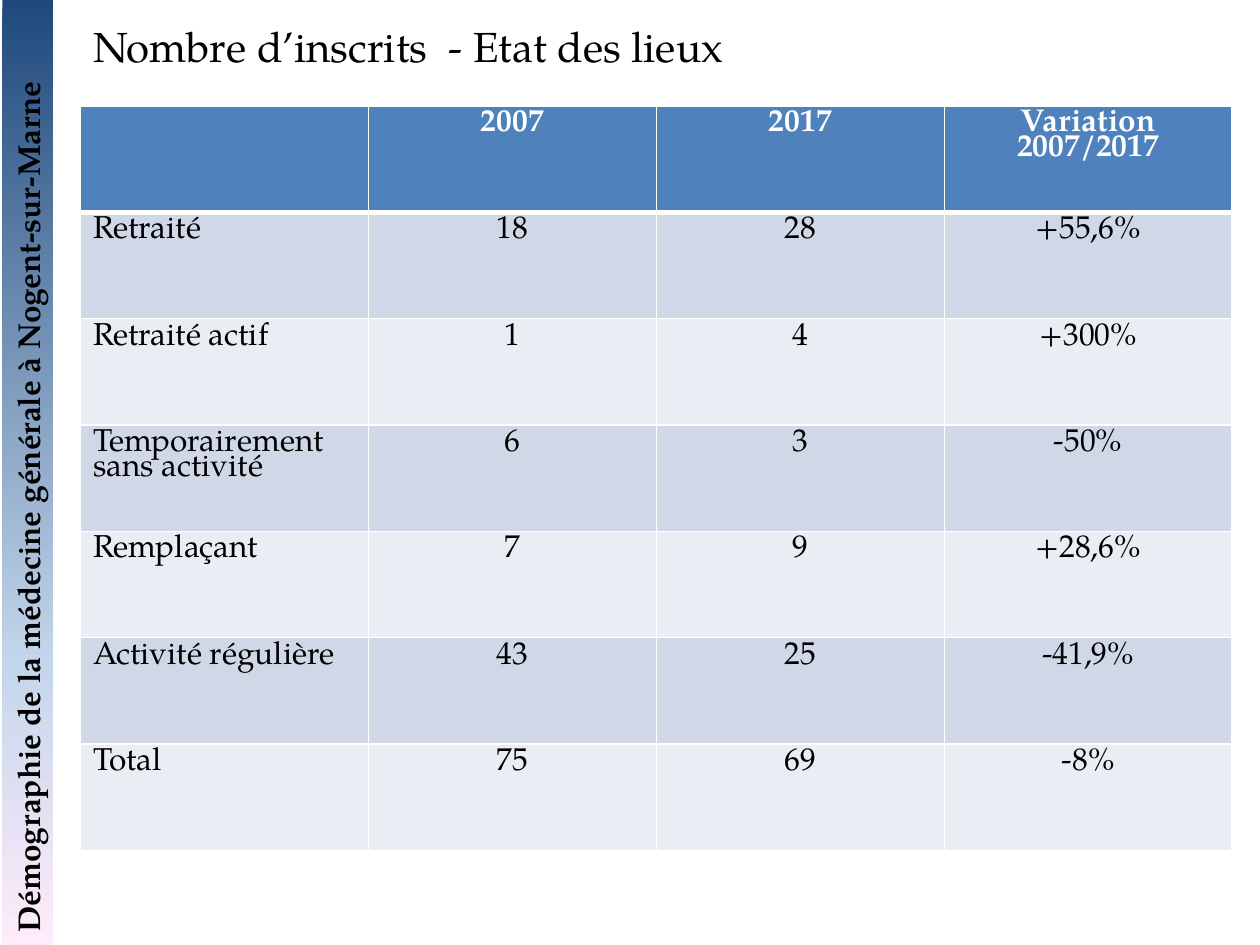
from dataclasses import dataclass

import lxml.etree
import pptx
import pptx.dml.color
import pptx.enum.shapes
import pptx.enum.text
import pptx.oxml
import pptx.oxml.ns
import pptx.util

Inches = pptx.util.Inches
Align = pptx.enum.text.PP_ALIGN


@dataclass(frozen=True)
class Theme:
    font: str = "TeX Gyre Pagella"
    title_size: int = 24
    body_size: int = 18
    text: str = "000000"
    white: str = "FFFFFF"
    header: str = "4F81BD"
    bands: tuple = ("D0D8E8", "E9EDF4")
    banner: tuple = ((0, "1F497D"), (70, "C4D6EB"), (100, "FFEBFA"))
    thin_border: int = 1
    thick_border: int = 3


def rgb(color):
    return pptx.dml.color.RGBColor.from_string(color)


def write(frame, text, *, font, size, color, bold=False, align=Align.LEFT, spacing=None):
    paragraph = frame.paragraphs[0]
    paragraph.alignment = align
    paragraph.line_spacing = spacing
    run = paragraph.add_run()
    run.text = text
    run.font.name = font
    run.font.size = pptx.util.Pt(size)
    run.font.bold = bold
    run.font.color.rgb = rgb(color)


class SlideBuilder:
    def __init__(self, slide, theme):
        self.slide = slide
        self.theme = theme

    def banner(self, text, left, top, width, height):
        """Rotated side bar whose gradient runs down the slide."""
        shape = self.slide.shapes.add_shape(
            pptx.enum.shapes.MSO_SHAPE.RECTANGLE,
            Inches(left), Inches(top), Inches(width), Inches(height))
        shape.rotation = 270
        shape.shadow.inherit = False
        shape.line.fill.background()
        stops = "".join(
            f'<a:gs pos="{position * 1000}"><a:srgbClr val="{color}"/></a:gs>'
            for position, color in self.theme.banner)
        gradient = pptx.oxml.parse_xml(
            f'<a:gradFill {pptx.oxml.ns.nsdecls("a")} rotWithShape="0">'
            f'<a:gsLst>{stops}</a:gsLst><a:lin ang="5400000" scaled="0"/></a:gradFill>')
        geometry = shape.element.spPr.find(pptx.oxml.ns.qn("a:prstGeom"))
        geometry.addnext(gradient)
        frame = shape.text_frame
        frame.word_wrap = True
        frame.vertical_anchor = pptx.enum.text.MSO_ANCHOR.TOP
        frame.auto_size = pptx.enum.text.MSO_AUTO_SIZE.SHAPE_TO_FIT_TEXT
        write(frame, text, font=self.theme.font, size=self.theme.body_size,
              color=self.theme.text, bold=True)

    def title(self, text, left, top, width, height):
        shape = self.slide.shapes.add_textbox(
            Inches(left), Inches(top), Inches(width), Inches(height))
        frame = shape.text_frame
        frame.word_wrap = False
        frame.auto_size = pptx.enum.text.MSO_AUTO_SIZE.SHAPE_TO_FIT_TEXT
        write(frame, text, font=self.theme.font, size=self.theme.title_size,
              color=self.theme.text)

    def borders(self, cell, row):
        thin, thick = self.theme.thin_border, self.theme.thick_border
        widths = {"lnL": thin, "lnR": thin,
                  "lnT": thick if row == 1 else thin,
                  "lnB": thick if row == 0 else thin}
        properties = cell._tc.get_or_add_tcPr()
        for side, width in widths.items():
            line = lxml.etree.SubElement(properties, pptx.oxml.ns.qn(f"a:{side}"),
                                         w=str(pptx.util.Pt(width)))
            fill = lxml.etree.SubElement(line, pptx.oxml.ns.qn("a:solidFill"))
            lxml.etree.SubElement(fill, pptx.oxml.ns.qn("a:srgbClr"), val=self.theme.white)

    def table(self, rows, left, top, width, height):
        table = self.slide.shapes.add_table(
            len(rows), len(rows[0]),
            Inches(left), Inches(top), Inches(width), Inches(height)).table
        for row, values in enumerate(rows):
            is_header = row == 0
            for column, value in enumerate(values):
                cell = table.cell(row, column)
                self.borders(cell, row)
                cell.fill.solid()
                cell.fill.fore_color.rgb = rgb(
                    self.theme.header if is_header else self.theme.bands[(row - 1) % 2])
                if value:
                    write(cell.text_frame, value, font=self.theme.font,
                          size=self.theme.body_size, bold=is_header, spacing=0.8,
                          color=self.theme.white if is_header else self.theme.text,
                          align=Align.CENTER if column else Align.LEFT)


def main():
    presentation = pptx.Presentation()
    presentation.slide_width = Inches(10)
    presentation.slide_height = Inches(7.5)
    slide = presentation.slides.add_slide(presentation.slide_layouts[6])
    builder = SlideBuilder(slide, Theme())

    # Side banner and title
    builder.banner("Démographie de la médecine générale à Nogent-sur-Marne",
                   -3.53, 3.55, 7.5, 0.4)
    builder.title("Nombre d’inscrits  - Etat des lieux", 0.64, 0.11, 5.27, 0.51)

    # Registrations by status
    builder.table([
        ("", "2007", "2017", "Variation 2007/2017"),
        ("Retraité", "18", "28", "+55,6%"),
        ("Retraité actif", "1", "4", "+300%"),
        ("Temporairement sans activité", "6", "3", "-50%"),
        ("Remplaçant", "7", "9", "+28,6%"),
        ("Activité régulière", "43", "25", "-41,9%"),
        ("Total", "75", "69", "-8%"),
    ], 0.64, 0.84, 9.14, 5.91)

    presentation.save("out.pptx")


if __name__ == "__main__":
    main()
